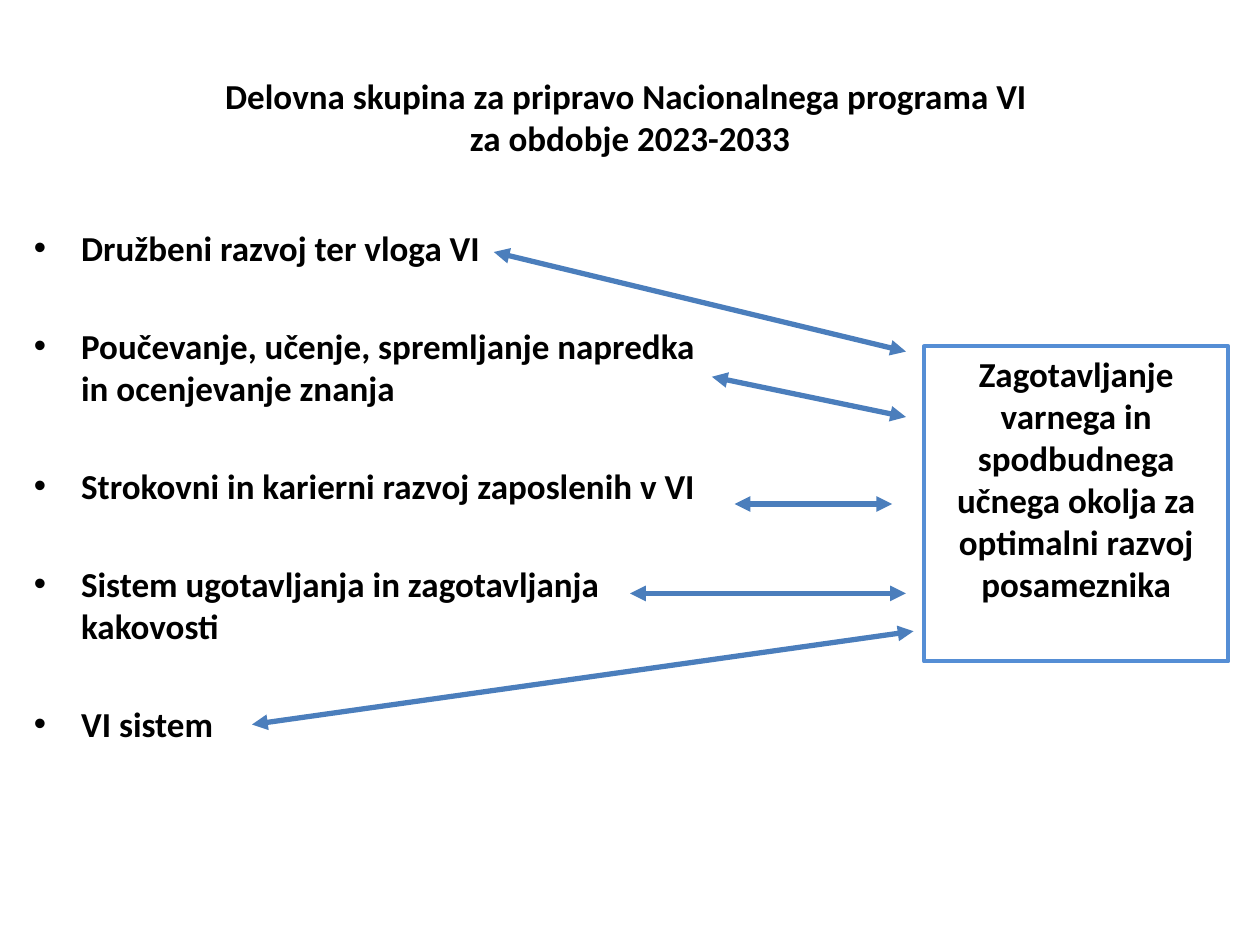
from dataclasses import dataclass

from lxml.etree import SubElement
from pptx import Presentation
from pptx.dml.color import RGBColor
from pptx.enum.shapes import MSO_CONNECTOR as Connector, MSO_SHAPE as Preset
from pptx.enum.text import MSO_ANCHOR as Anchor, MSO_AUTO_SIZE as AutoSize, PP_ALIGN as Align
from pptx.oxml.ns import qn
from pptx.slide import Slide
from pptx.text.text import _Paragraph as Paragraph
from pptx.util import Pt

BLACK = RGBColor(0x00, 0x00, 0x00)
GOAL_BORDER = RGBColor(0x55, 0x8E, 0xD5)
LINK_BLUE = RGBColor(0x4B, 0x7E, 0xBC)

FONT = "Calibri"
TEXT_SIZE = 20
TOPIC_GAP = 32
BULLET_INDENT = 27


@dataclass(frozen=True)
class Box:
    left: float
    top: float
    width: float
    height: float

    def lengths(self) -> tuple:
        return Pt(self.left), Pt(self.top), Pt(self.width), Pt(self.height)


@dataclass(frozen=True)
class Link:
    goal_x: float
    goal_y: float
    topic_x: float
    topic_y: float


TITLE_BOX = Box(36, 21.6, 648, 90)
TOPICS_BOX = Box(12.24, 126, 408, 356.4)
GOAL_BOX = Box(528, 198, 174, 180)

TITLE_LINES = (
    "Delovna skupina za pripravo Nacionalnega programa VI ",
    "za obdobje 2023-2033",
)
TOPICS = (
    "Družbeni razvoj ter vloga VI",
    "Poučevanje, učenje, spremljanje napredka in ocenjevanje znanja",
    "Strokovni in karierni razvoj zaposlenih v VI",
    "Sistem ugotavljanja in zagotavljanja kakovosti",
    "VI sistem",
)
GOAL = "Zagotavljanje varnega in spodbudnega učnega okolja za optimalni razvoj posameznika"

LINKS = (
    Link(517.7, 200.9, 282.2, 144),
    Link(522, 360.7, 144, 414),
    Link(517.7, 238.3, 406.8, 215.3),
    Link(517.7, 339.1, 360, 339.1),
    Link(509.8, 288, 419.8, 288),
)


def add_text(paragraph: Paragraph, text: str) -> None:
    run = paragraph.add_run()
    run.text = text
    run.font.name = FONT
    run.font.size = Pt(TEXT_SIZE)
    run.font.bold = True
    run.font.color.rgb = BLACK


def add_bullet(paragraph: Paragraph) -> None:
    properties = paragraph._p.get_or_add_pPr()
    properties.set("marL", str(Pt(BULLET_INDENT)))
    properties.set("indent", str(-Pt(BULLET_INDENT)))
    SubElement(properties, qn("a:buFont"), typeface="Arial")
    SubElement(properties, qn("a:buChar"), char="•")


def fill_title(slide: Slide) -> None:
    title = slide.shapes.title
    title.left, title.top, title.width, title.height = TITLE_BOX.lengths()
    frame = title.text_frame
    frame.auto_size = AutoSize.NONE
    frame.vertical_anchor = Anchor.MIDDLE
    heading = frame.paragraphs[0]
    heading.alignment = Align.CENTER
    for index, line in enumerate(TITLE_LINES):
        if index:
            heading.add_line_break()
        add_text(heading, line)


def add_topics(slide: Slide) -> None:
    frame = slide.shapes.add_textbox(*TOPICS_BOX.lengths()).text_frame
    frame.word_wrap = True
    frame.margin_right = Pt(12)
    for index, topic in enumerate(TOPICS):
        paragraph = frame.add_paragraph() if index else frame.paragraphs[0]
        paragraph.space_before = Pt(TOPIC_GAP if index else 0)
        add_bullet(paragraph)
        add_text(paragraph, topic)


def add_goal(slide: Slide) -> None:
    goal = slide.shapes.add_shape(Preset.RECTANGLE, *GOAL_BOX.lengths())
    goal.shadow.inherit = False
    goal.fill.background()
    goal.line.color.rgb = GOAL_BORDER
    goal.line.width = Pt(2.25)
    frame = goal.text_frame
    frame.word_wrap = True
    frame.vertical_anchor = Anchor.TOP
    frame.paragraphs[0].alignment = Align.CENTER
    add_text(frame.paragraphs[0], GOAL)


def add_link(slide: Slide, link: Link) -> None:
    arrow = slide.shapes.add_connector(
        Connector.STRAIGHT,
        Pt(link.goal_x), Pt(link.goal_y), Pt(link.topic_x), Pt(link.topic_y),
    )
    arrow.line.color.rgb = LINK_BLUE
    arrow.line.width = Pt(3)
    outline = arrow.line._get_or_add_ln()
    for end in ("a:headEnd", "a:tailEnd"):
        SubElement(outline, qn(end), type="triangle")
    SubElement(arrow._element.spPr, qn("a:effectLst"))


def main() -> None:
    presentation = Presentation()
    presentation.slide_width = Pt(720)
    presentation.slide_height = Pt(540)
    title_only = presentation.slide_layouts[5]
    slide = presentation.slides.add_slide(title_only)
    fill_title(slide)
    add_topics(slide)
    add_goal(slide)
    for link in LINKS:
        add_link(slide, link)
    presentation.save("out.pptx")


if __name__ == "__main__":
    main()
